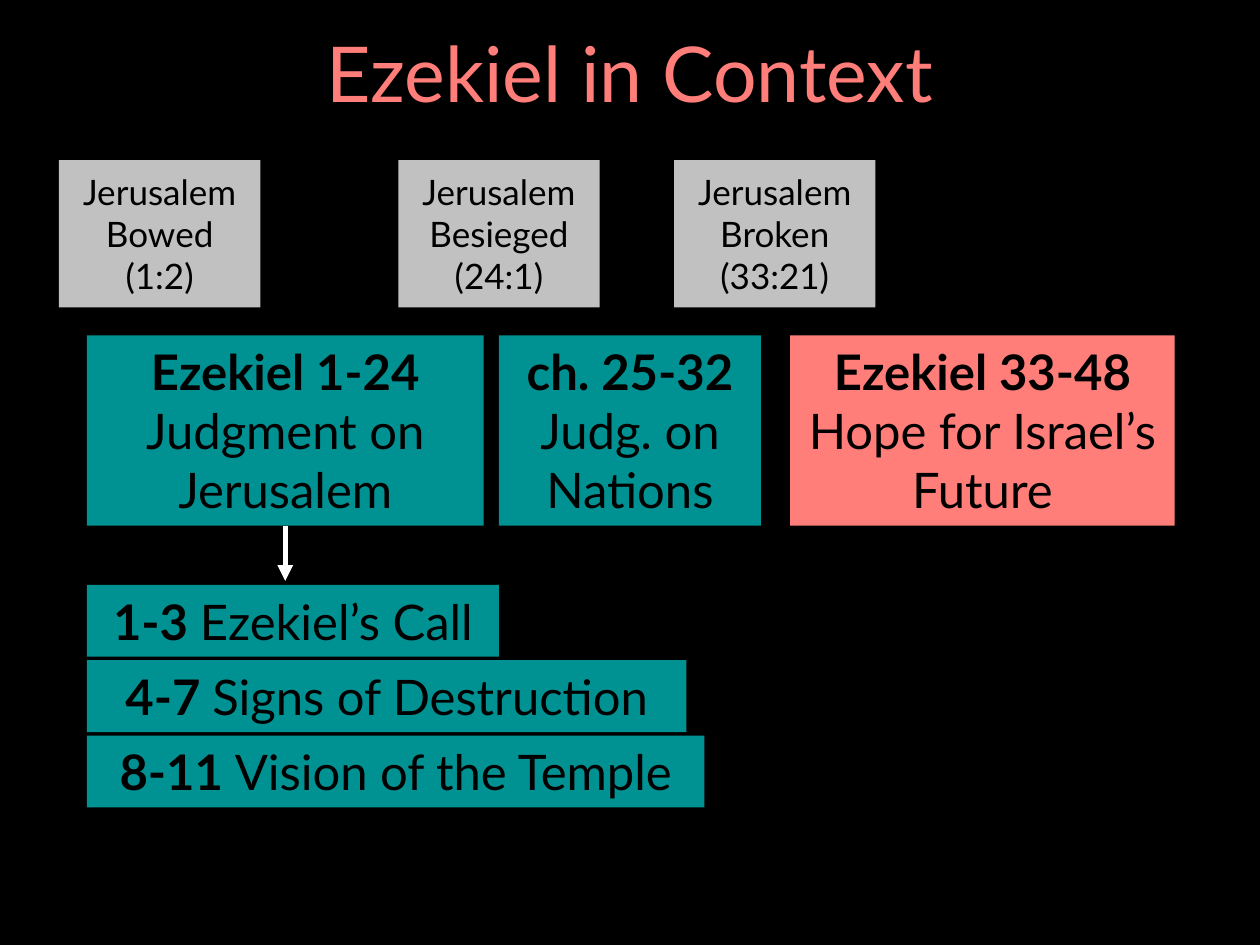
"""Build the slide that sets the parts of Ezekiel beside the fall of Jerusalem."""
import dataclasses

import lxml.etree
import pptx
import pptx.dml.color
import pptx.enum.shapes
import pptx.enum.text
import pptx.oxml.ns
import pptx.util

Cm = pptx.util.Cm
HUES = {"back": "000000", "ink": "000000", "teal": "009193",
        "coral": "FF7E79", "gray": "C1C1C1", "arrow": "FFFFFF"}
FONT = "Lato"
LEFT = 1.75


@dataclasses.dataclass
class Event:
    left: float
    name: str
    verse: str


@dataclasses.dataclass
class Part:
    left: float
    width: float
    hue: str
    range: str
    theme: str


@dataclasses.dataclass
class Step:
    width: float
    range: str
    theme: str


EVENTS = [
    Event(13.59, "Jerusalem Broken", "(33:21)"),
    Event(8.03, "Jerusalem Besieged", "(24:1)"),
    Event(1.19, "Jerusalem Bowed", "(1:2)"),
]
PARTS = [
    Part(LEFT, 8, "teal", "Ezekiel 1-24", "Judgment on Jerusalem"),
    Part(10.06, 5.28, "teal", "ch. 25-32", "Judg. on Nations"),
    Part(15.93, 7.75, "coral", "Ezekiel 33-48", "Hope for Israel’s Future"),
]
STEPS = [
    Step(8.31, "1-3 ", "Ezekiel’s Call"),
    Step(12.09, "4-7 ", "Signs of Destruction"),
    Step(12.45, "8-11 ", "Vision of the Temple"),
]


def color(hue: str) -> pptx.dml.color.RGBColor:
    """Return the named colour."""
    return pptx.dml.color.RGBColor.from_string(HUES[hue])


def write(par, text: str, *, size: float = 28, bold: bool = False, hue: str = "ink") -> None:
    """Add a centred run of text to a paragraph."""
    par.alignment = pptx.enum.text.PP_ALIGN.CENTER
    run = par.add_run()
    run.text = text
    run.font.name = FONT
    run.font.size = pptx.util.Pt(size)
    run.font.bold = bold
    run.font.color.rgb = color(hue)


def draw_box(slide, left: float, top: float, width: float, height: float,
             hue: str, anchor=pptx.enum.text.MSO_ANCHOR.TOP):
    """Draw a plain filled box that wraps its text."""
    box = slide.shapes.add_shape(pptx.enum.shapes.MSO_SHAPE.RECTANGLE,
                                 Cm(left), Cm(top), Cm(width), Cm(height))
    box.shadow.inherit = False
    box.fill.solid()
    box.fill.fore_color.rgb = color(hue)
    box.line.fill.background()
    box.text_frame.word_wrap = True
    box.text_frame.vertical_anchor = anchor
    return box


def draw_event(slide, event: Event) -> None:
    """Draw an event in the top row."""
    box = draw_box(slide, event.left, 3.23, 4.06, 2.97, "gray",
                   pptx.enum.text.MSO_ANCHOR.MIDDLE)
    write(box.text_frame.paragraphs[0], event.name, size=20)
    write(box.text_frame.add_paragraph(), event.verse, size=20)


def draw_part(slide, part: Part):
    """Draw a main part of the book and return its box."""
    box = draw_box(slide, part.left, 6.76, part.width, 3.84, part.hue)
    write(box.text_frame.paragraphs[0], part.range, bold=True)
    write(box.text_frame.add_paragraph(), part.theme)
    return box


def draw_step(slide, step: Step, row: int) -> None:
    """Draw a section of the first part in its row."""
    box = draw_box(slide, LEFT, 11.79 + 1.52 * row, step.width, 1.45, "teal")
    par = box.text_frame.paragraphs[0]
    write(par, step.range, bold=True)
    write(par, step.theme)


def draw_arrow(slide, box, end: float) -> None:
    """Draw an arrow straight down from the bottom of a box."""
    mid = box.left + box.width // 2
    arrow = slide.shapes.add_connector(pptx.enum.shapes.MSO_CONNECTOR.STRAIGHT,
                                       mid, box.top + box.height, mid, Cm(end))
    arrow.begin_connect(box, 2)
    arrow.line.color.rgb = color("arrow")
    arrow.line.width = pptx.util.Pt(3)
    qn = pptx.oxml.ns.qn
    props = arrow._element.spPr
    lxml.etree.SubElement(props.find(qn("a:ln")), qn("a:tailEnd"), type="triangle")
    lxml.etree.SubElement(props, qn("a:effectLst"))


def draw_title(slide, text: str) -> None:
    """Place and fill the title."""
    title = slide.shapes.title
    title.left, title.top, title.width, title.height = Cm(LEFT), Cm(0.41), Cm(21.89), Cm(2.29)
    title.text_frame.vertical_anchor = pptx.enum.text.MSO_ANCHOR.MIDDLE
    par = title.text_frame.paragraphs[0]
    par.line_spacing = 0.9
    write(par, text, size=44, hue="coral")


def main() -> None:
    """Build and save the deck."""
    deck = pptx.Presentation()
    deck.slide_width, deck.slide_height = Cm(25.4), Cm(19.05)
    slide = deck.slides.add_slide(deck.slide_layouts[5])
    slide.background.fill.solid()
    slide.background.fill.fore_color.rgb = color("back")
    draw_title(slide, "Ezekiel in Context")
    boxes = [draw_part(slide, part) for part in PARTS]
    for event in EVENTS:
        draw_event(slide, event)
    for row, step in enumerate(STEPS):
        draw_step(slide, step, row)
    draw_arrow(slide, boxes[0], 11.71)
    deck.save("out.pptx")


if __name__ == "__main__":
    main()
